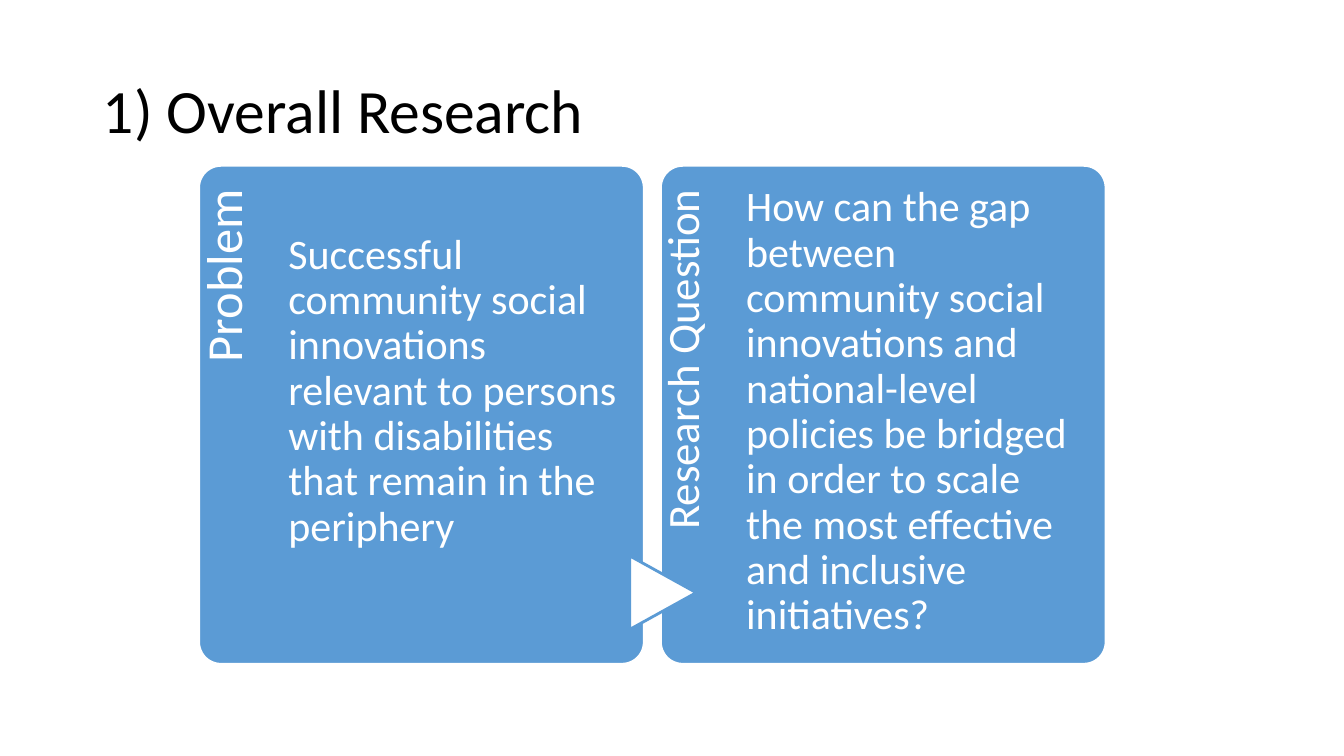
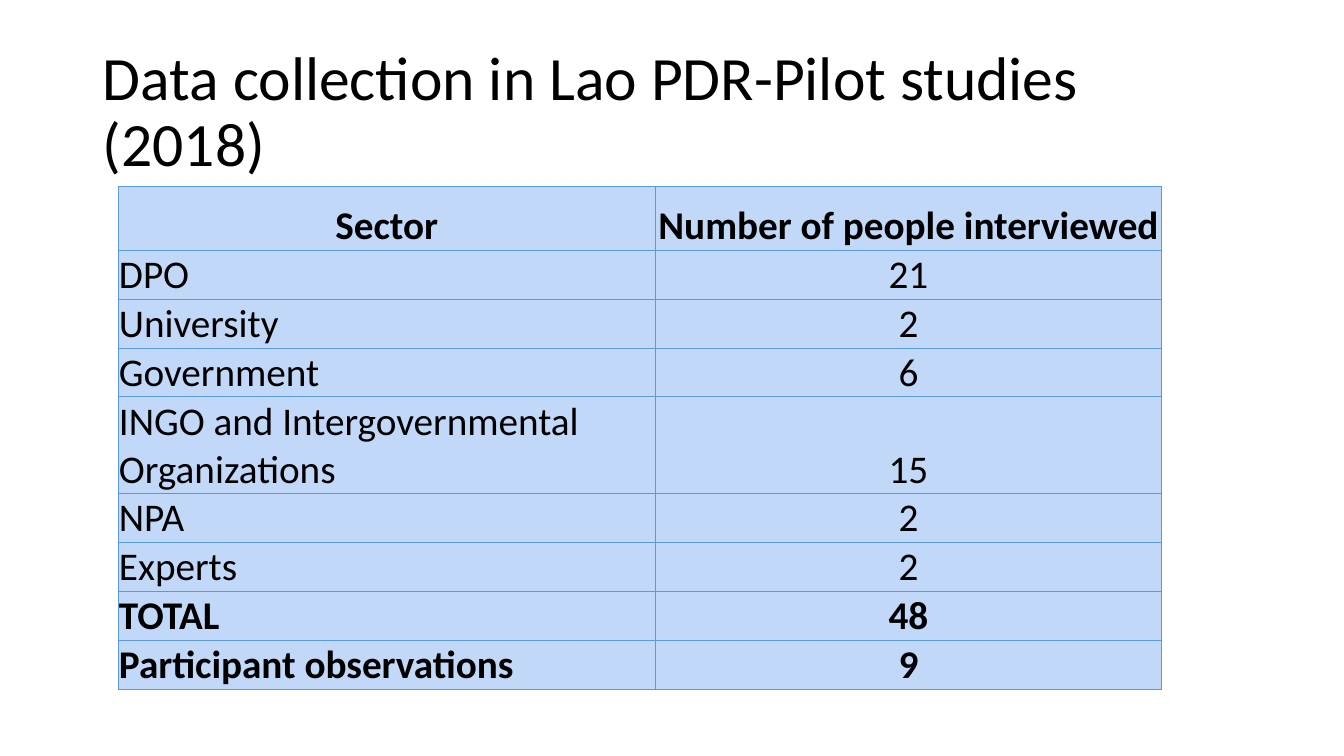
import pptx
import pptx.dml.color
import pptx.enum.shapes
import pptx.enum.text
import pptx.oxml
import pptx.oxml.ns
import pptx.util

Inches = pptx.util.Inches
Pt = pptx.util.Pt
Align = pptx.enum.text.PP_ALIGN
Anchor = pptx.enum.text.MSO_ANCHOR
Shape = pptx.enum.shapes.MSO_SHAPE

# Content
RESEARCH_TITLE = "1) Overall Research"
CARDS = [
    {"label": "Problem", "label_size": 36, "body_left": 0.89, "body_top": 2.31, "body_height": 3.15,
     "body": "Successful community social innovations relevant to persons "
             "with disabilities that remain in the periphery"},
    {"label": "Research Question", "label_size": 32, "body_left": 0.85, "body_top": 1.84, "body_height": 4.54,
     "body": "How can the gap between community social innovations and national-level "
             "policies be bridged in order to scale the most effective and inclusive initiatives?"},
]
DATA_TITLE = "Data collection in Lao PDR-Pilot studies (2018)"
INTERVIEWS = [
    ("Sector", "Number of people interviewed"),
    ("DPO", "21"),
    ("University", "2"),
    ("Government", "6"),
    ("INGO and Intergovernmental Organizations", "15"),
    ("NPA", "2"),
    ("Experts", "2"),
    ("TOTAL", "48"),
    ("Participant observations", "9"),
]
BOLD_ROWS = {"Sector", "TOTAL", "Participant observations"}

# Shared style
FONT = "Calibri"
COLORS = {"blue": "5B9BD5", "pale": "C2D8F8", "white": "FFFFFF", "black": "000000"}
LINE_SPACING = 0.9

# Layout, in inches
CARD_LEFT, CARD_TOP, CARD_WIDTH, CARD_HEIGHT = 1.97, 1.64, 4.42, 4.95
CARD_STEP = 4.58
LABEL_TOP, LABEL_LENGTH = 1.88, 4.06
BODY_WIDTH = 3.29
TABLE_LEFT, TABLE_TOP = 1.17, 1.85
COLUMN_WIDTHS = [5.33, 5.02]
HEADER_HEIGHT, ROW_HEIGHT, TALL_ROW_HEIGHT = 0.63, 0.48, 0.96
TALL_ROW = 4


def rgb(name):
    return pptx.dml.color.RGBColor.from_string(COLORS[name])


def style(para, size, color, bold=False, align=Align.LEFT):
    para.alignment = align
    para.font.name = FONT
    para.font.size = Pt(size)
    para.font.bold = bold
    para.font.color.rgb = rgb(color)


def add_titled_slide(deck, title):
    page = deck.slides.add_slide(deck.slide_layouts[5])
    box = page.shapes.title
    box.left, box.top, box.width, box.height = map(Inches, (0.92, 0.4, 11.5, 1.45))
    frame = box.text_frame
    frame.text = title
    frame.auto_size = pptx.enum.text.MSO_AUTO_SIZE.NONE
    frame.vertical_anchor = Anchor.MIDDLE
    style(frame.paragraphs[0], 44, "black")
    frame.paragraphs[0].line_spacing = LINE_SPACING
    return page


def add_shape(page, kind, place, fill, line):
    shape = page.shapes.add_shape(kind, *map(Inches, place))
    shape.shadow.inherit = False
    shape.fill.solid()
    shape.fill.fore_color.rgb = rgb(fill)
    shape.line.color.rgb = rgb(line)
    shape.line.width = Pt(2)
    return shape


def add_text(page, place, text, size, align=Align.LEFT):
    box = page.shapes.add_textbox(*map(Inches, place))
    frame = box.text_frame
    frame.word_wrap = True
    frame.margin_left = frame.margin_right = frame.margin_top = frame.margin_bottom = 0
    frame.text = text
    style(frame.paragraphs[0], size, "white", align=align)
    frame.paragraphs[0].line_spacing = LINE_SPACING
    return box


def add_card(page, left, card):
    shape = add_shape(page, Shape.ROUNDED_RECTANGLE,
                      (left, CARD_TOP, CARD_WIDTH, CARD_HEIGHT), "blue", "white")
    shape.adjustments[0] = 0.05
    # Label turned to read upwards, flush with the card's left edge
    thickness = card["label_size"] * 1.1 / 72
    label_left = left + (thickness - LABEL_LENGTH) / 2
    label_top = LABEL_TOP + (LABEL_LENGTH - thickness) / 2
    label = add_text(page, (label_left, label_top, LABEL_LENGTH, thickness),
                     card["label"], card["label_size"], Align.RIGHT)
    label.rotation = 270
    add_text(page, (left + card["body_left"], card["body_top"], BODY_WIDTH, card["body_height"]),
             card["body"], 30)


def add_borders(cell):
    properties = cell._tc.get_or_add_tcPr()
    for side in ("lnL", "lnR", "lnT", "lnB"):
        properties.append(pptx.oxml.parse_xml(
            f'<a:{side} {pptx.oxml.ns.nsdecls("a")} w="{Pt(0.5)}"><a:solidFill>'
            f'<a:srgbClr val="{COLORS["blue"]}"/></a:solidFill></a:{side}>'))


def add_table(page):
    heights = [HEADER_HEIGHT] + [ROW_HEIGHT] * (len(INTERVIEWS) - 1)
    heights[TALL_ROW] = TALL_ROW_HEIGHT
    place = (TABLE_LEFT, TABLE_TOP, sum(COLUMN_WIDTHS), sum(heights))
    table = page.shapes.add_table(len(INTERVIEWS), len(COLUMN_WIDTHS), *map(Inches, place)).table
    table.first_row = table.horz_banding = False
    for column, width in zip(table.columns, COLUMN_WIDTHS):
        column.width = Inches(width)
    for row, height in zip(table.rows, heights):
        row.height = Inches(height)
    for row_index, values in enumerate(INTERVIEWS):
        for column_index, text in enumerate(values):
            cell = table.cell(row_index, column_index)
            add_borders(cell)
            cell.fill.solid()
            cell.fill.fore_color.rgb = rgb("pale")
            cell.margin_left = cell.margin_right = cell.margin_top = Inches(0.01)
            cell.margin_bottom = 0
            cell.vertical_anchor = Anchor.BOTTOM
            cell.text = text
            centered = row_index == 0 or column_index == 1
            style(cell.text_frame.paragraphs[0], 28, "black", values[0] in BOLD_ROWS,
                  Align.CENTER if centered else Align.LEFT)


def main():
    deck = pptx.Presentation()
    deck.slide_width, deck.slide_height = Inches(13.33), Inches(7.5)

    # Research problem and question
    page = add_titled_slide(deck, RESEARCH_TITLE)
    for index, card in enumerate(CARDS):
        add_card(page, CARD_LEFT + index * CARD_STEP, card)
    arrow = add_shape(page, Shape.ISOSCELES_TRIANGLE, (6.21, 5.55, 0.73, 0.66), "white", "blue")
    arrow.rotation = 90

    # Interview counts
    add_table(add_titled_slide(deck, DATA_TITLE))

    deck.save("out.pptx")


if __name__ == "__main__":
    main()
